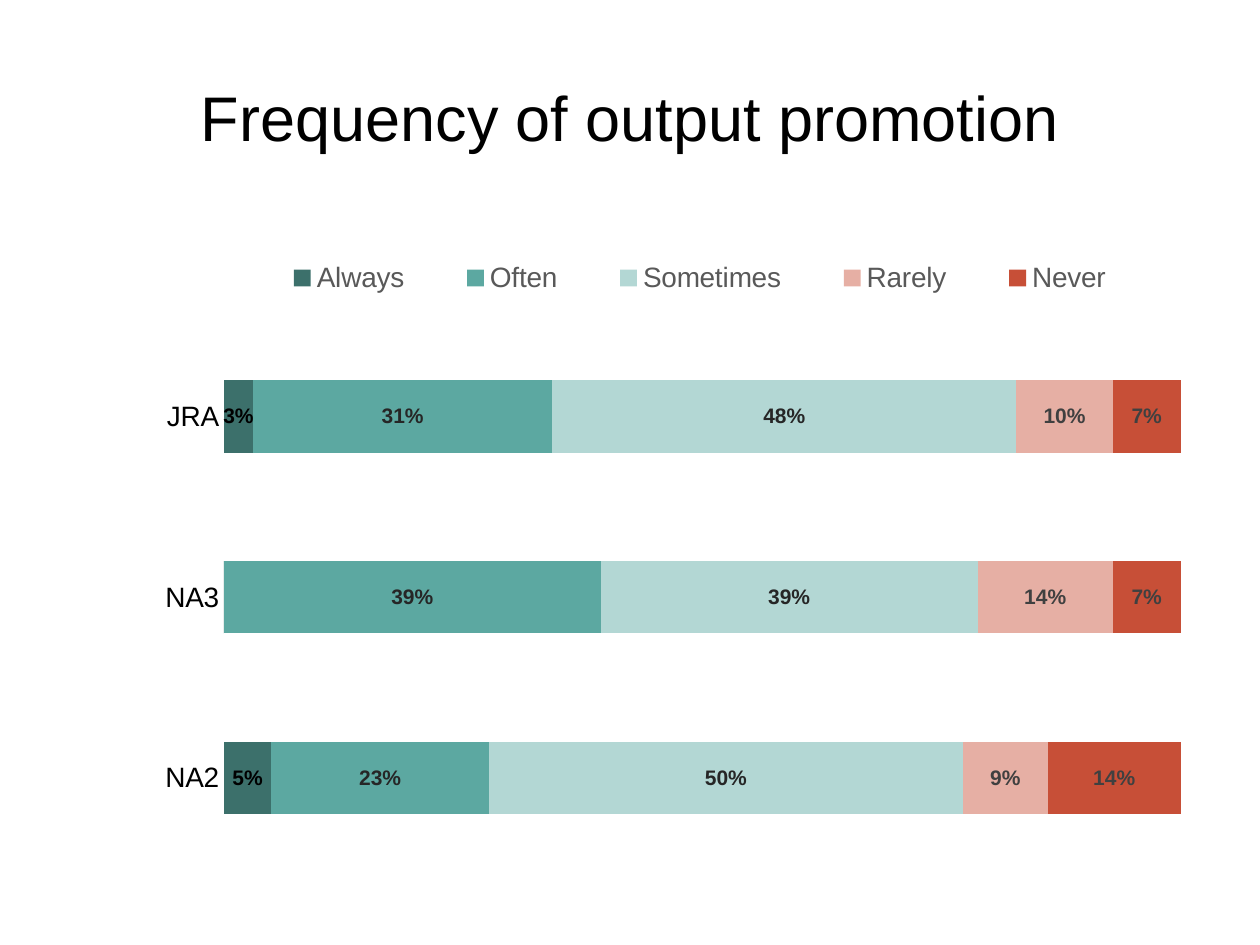
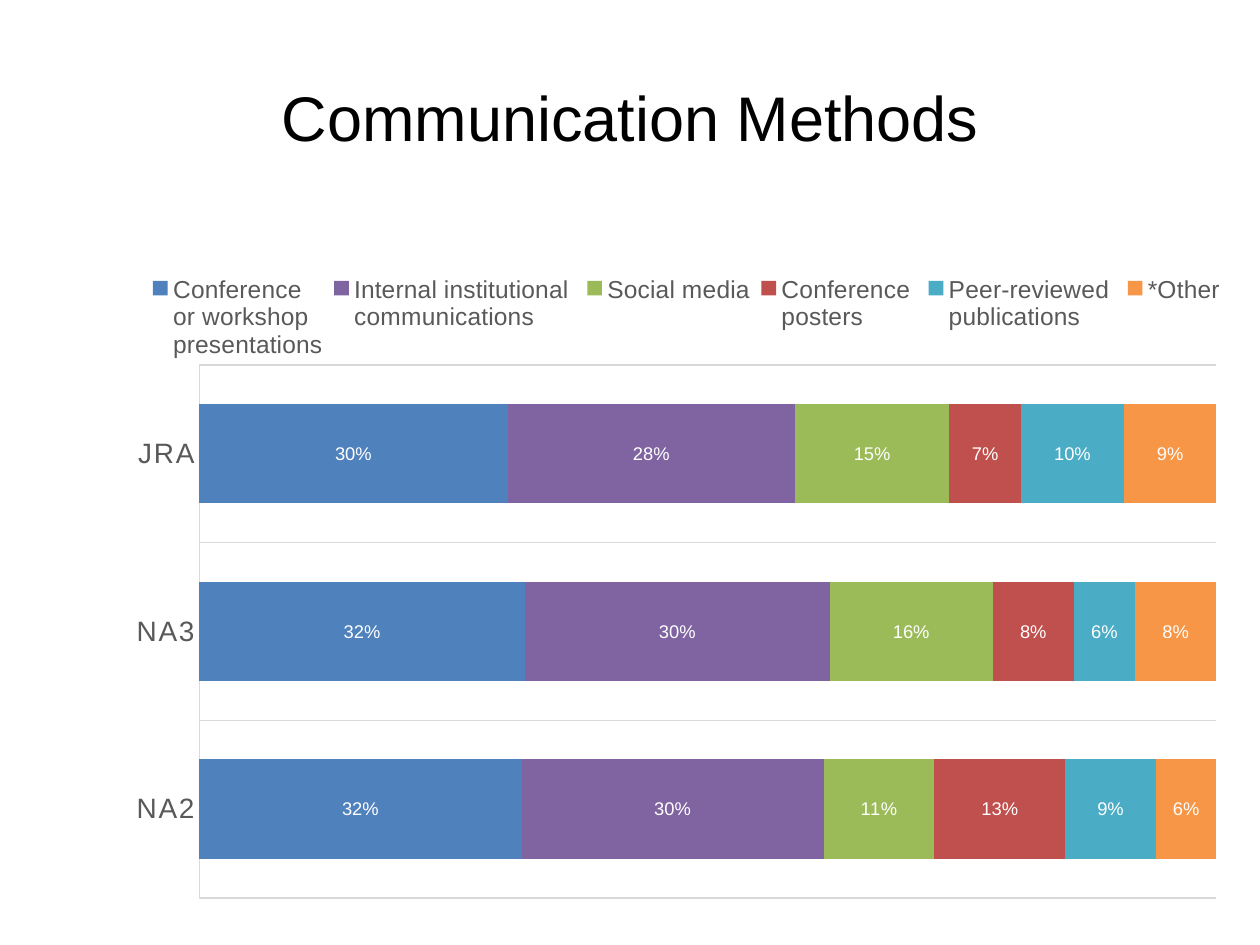
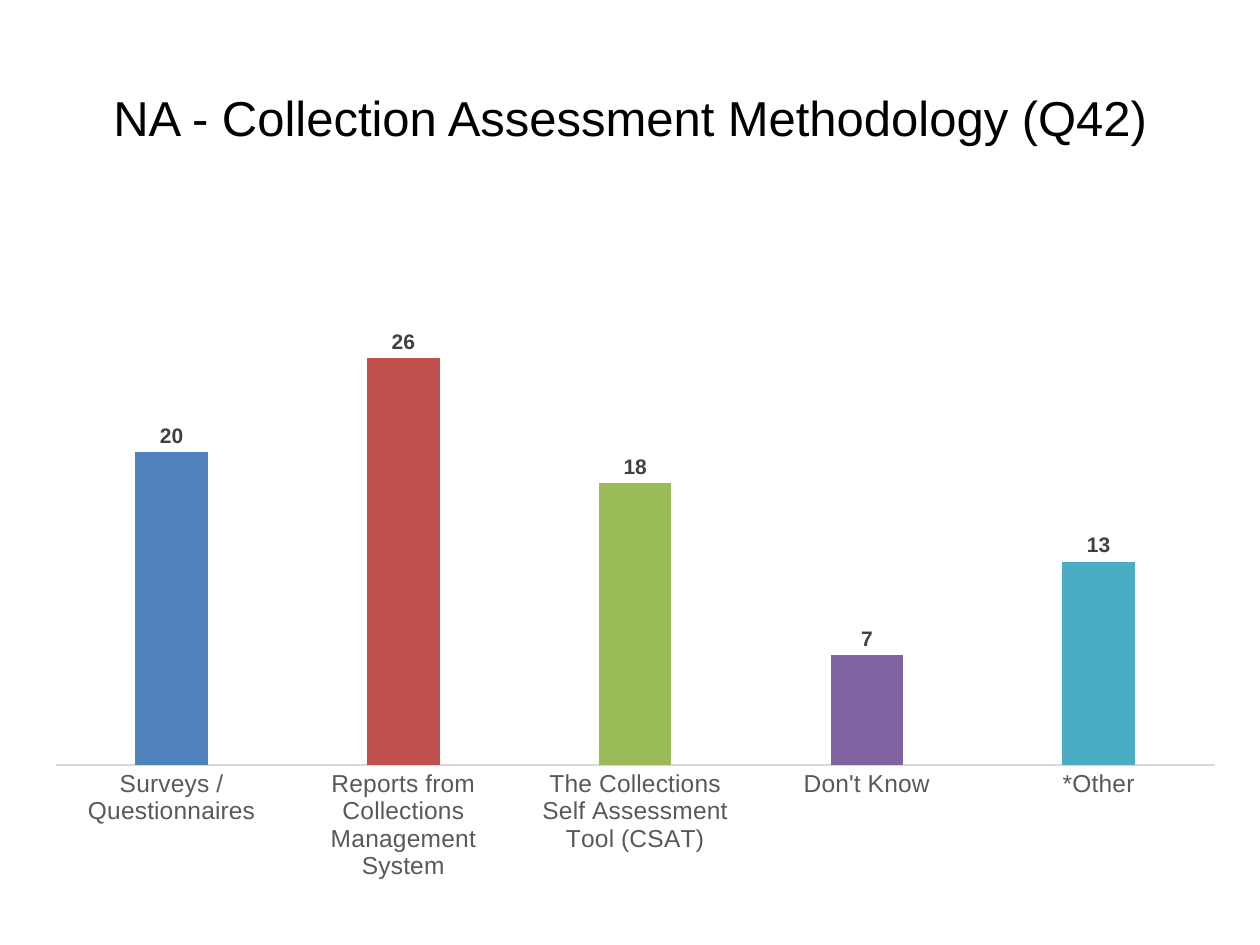
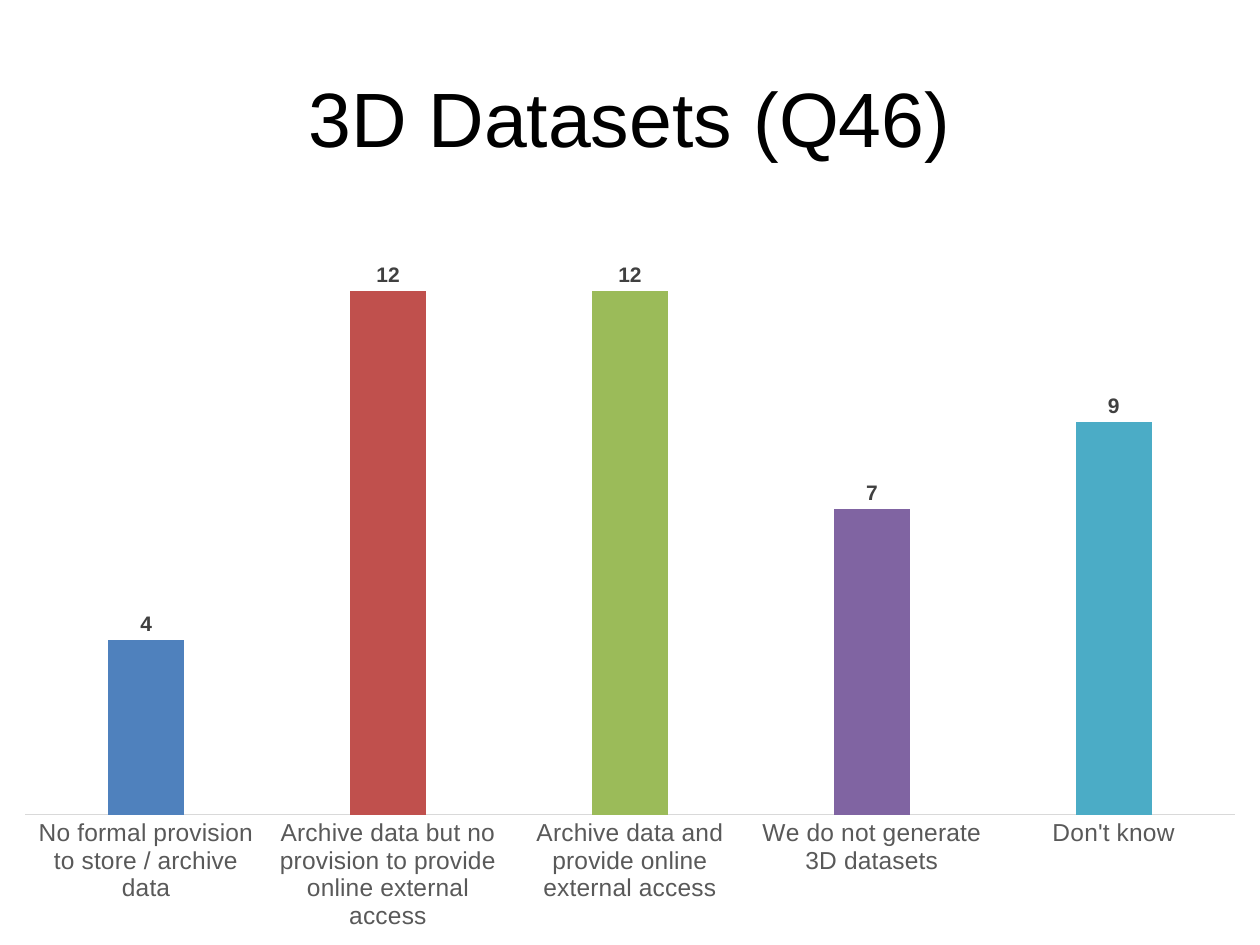
from pptx import Presentation
from pptx.chart.data import CategoryChartData
from pptx.dml.color import RGBColor
from pptx.enum.chart import XL_CHART_TYPE, XL_LABEL_POSITION, XL_LEGEND_POSITION, XL_TICK_MARK
from pptx.enum.text import MSO_ANCHOR, PP_ALIGN
from pptx.oxml import parse_xml
from pptx.oxml.ns import nsdecls
from pptx.util import Cm, Pt

STACKED = XL_CHART_TYPE.BAR_STACKED_100
COLUMNS = XL_CHART_TYPE.COLUMN_CLUSTERED
CENTER_LABEL = XL_LABEL_POSITION.CENTER
OUTSIDE_LABEL = XL_LABEL_POSITION.OUTSIDE_END
BOTTOM = XL_LEGEND_POSITION.BOTTOM
TOP = XL_LEGEND_POSITION.TOP
NO_TICK = XL_TICK_MARK.NONE
MIDDLE = MSO_ANCHOR.MIDDLE
CENTER = PP_ALIGN.CENTER

FONT = "Arial"
COLORS = {
    "black": "000000", "white": "FFFFFF", "ink": "262626", "dark": "404040",
    "gray": "595959", "rule": "D9D9D9",
    "pine": "3C706B", "teal": "5CA8A1", "mist": "B3D7D4", "blush": "E6AFA4", "brick": "C74F37",
    "blue": "4F81BD", "red": "C0504D", "green": "9BBB59", "purple": "8064A2",
    "aqua": "4BACC6", "orange": "F79646",
}
COLUMN_COLORS = ["blue", "red", "green", "purple", "aqua"]
GROUPS = ["NA2", "NA3", "JRA"]
TITLE_AREA = (1.27, 0.76, 22.86, 3.18)

SLIDES = [
    {
        "title": "Frequency of output promotion", "title_size": 36,
        "area": (0.81, 4.88, 23.75, 13.13), "kind": STACKED, "categories": GROUPS,
        "series": [
            ("Always", [0.05, 0, 0.03], "pine", "black"),
            ("Often", [0.23, 0.39, 0.31], "teal", "ink"),
            ("Sometimes", [0.5, 0.39, 0.48], "mist", "ink"),
            ("Rarely", [0.09, 0.14, 0.1], "blush", "dark"),
            ("Never", [0.14, 0.07, 0.07], "brick", "dark"),
        ],
        "label_size": 12, "label_bold": True, "gap": 150, "maximum": 1,
        "axis_size": 16, "axis_color": "black", "axis_line": False,
        "legend": (BOTTOM, 16, (0.17, 0.02, 0.78, 0.07)),
        "plot": (0.156, 0.129, 0.812, 0.833),
    },
    {
        "title": "Communication Methods", "title_size": 36,
        "area": (0.08, 4.65, 25.25, 13.97), "kind": STACKED, "categories": GROUPS,
        "series": [
            ("Conference \nor workshop \npresentations", [0.32, 0.32, 0.3], "blue", "white"),
            ("Internal institutional \ncommunications", [0.3, 0.3, 0.28], "purple", "white"),
            ("Social media", [0.11, 0.16, 0.15], "green", "white"),
            ("Conference \nposters", [0.13, 0.08, 0.07], "red", "white"),
            ("Peer-reviewed \npublications", [0.09, 0.06, 0.1], "aqua", "white"),
            ("*Other", [0.06, 0.08, 0.09], "orange", "white"),
        ],
        "label_size": 10.5, "label_bold": False, "gap": 79, "maximum": 1,
        "axis_size": 16, "axis_color": "gray", "axis_line": True,
        "axis_spacing": 120, "grid": True,
        "legend": (TOP, 14, (0.11, 0.06, 0.87, 0.13)),
        "plot": (0.156, 0.194, 0.812, 0.769),
    },
    {
        "title": "NA - Collection Assessment Methodology (Q42)", "title_size": 28,
        "area": (0.64, 5.72, 24.33, 12.27), "kind": COLUMNS,
        "categories": [
            "Surveys / Questionnaires", "Reports from Collections Management System",
            "The Collections Self Assessment Tool (CSAT)", "Don't Know", "*Other",
        ],
        "series": [("Series 1", [20, 26, 18, 7, 13], "blue", "dark")],
        "label_size": 12, "label_bold": True, "gap": 219, "maximum": 30,
        "axis_size": 14, "axis_color": "gray", "axis_line": True,
    },
    {
        "title": "3D Datasets (Q46)", "title_size": 44,
        "area": (0, 3.81, 25.4, 15.24), "kind": COLUMNS,
        "categories": [
            "No formal provision to store / archive data",
            "Archive data but no provision to provide online external access",
            "Archive data and provide online external access",
            "We do not generate 3D datasets", "Don't know",
        ],
        "series": [("Series 1", [4, 12, 12, 7, 9], "blue", "dark")],
        "label_size": 12, "label_bold": True, "gap": 219, "maximum": 14,
        "axis_size": 14, "axis_color": "gray", "axis_line": True,
    },
]


def color(name):
    return RGBColor.from_string(COLORS[name])


def set_font(font, size, ink, bold=False):
    font.name = FONT
    font.size = Pt(size)
    font.bold = bold
    font.color.rgb = color(ink)


def set_fill(target, name):
    target.format.fill.solid()
    target.format.fill.fore_color.rgb = color(name)


def set_line(line):
    line.color.rgb = color("rule")
    line.width = Pt(0.75)


def add_text(page, text, area, size, ink="black", align=CENTER, anchor=MIDDLE):
    box = page.shapes.add_textbox(*map(Cm, area))
    frame = box.text_frame
    frame.word_wrap = True
    frame.vertical_anchor = anchor
    para = frame.paragraphs[0]
    para.alignment = align
    span = para.add_run()
    span.text = text
    set_font(span.font, size, ink)


def make_layout(parent, bounds, target=""):
    for old in parent.xpath("c:layout"):
        parent.remove(old)
    modes = '<c:xMode val="edge"/><c:yMode val="edge"/>'
    sizes = "".join(f'<c:{key} val="{value}"/>' for key, value in zip("xywh", bounds))
    return parse_xml(
        f'<c:layout {nsdecls("c")}><c:manualLayout>{target}{modes}{sizes}</c:manualLayout></c:layout>'
    )


def place_plot(chart, bounds):
    area = chart._chartSpace.xpath("c:chart/c:plotArea")[0]
    area.insert(0, make_layout(area, bounds, '<c:layoutTarget val="inner"/>'))


def add_legend(chart, position, size, bounds):
    chart.has_legend = True
    chart.legend.position = position
    chart.legend.include_in_layout = False
    set_font(chart.legend.font, size, "gray")
    legend = chart._chartSpace.xpath("c:chart/c:legend")[0]
    legend.xpath("c:legendPos")[0].addnext(make_layout(legend, bounds))


def style_axes(chart, info):
    values = chart.value_axis
    values.visible = False
    values.has_major_gridlines = False
    values.minimum_scale = 0
    values.maximum_scale = info["maximum"]
    axis = chart.category_axis
    axis.major_tick_mark = axis.minor_tick_mark = NO_TICK
    set_font(axis.tick_labels.font, info["axis_size"], info["axis_color"])
    if info["axis_line"]:
        set_line(axis.format.line)
    else:
        axis.format.line.fill.background()
    if info.get("grid"):
        axis.has_major_gridlines = True
        set_line(axis.major_gridlines.format.line)
    if "axis_spacing" in info:
        text = chart._chartSpace.xpath(".//c:catAx/c:txPr//a:defRPr")[0]
        text.set("spc", str(info["axis_spacing"]))


def style_series(chart, info):
    stacked = info["kind"] == STACKED
    for series, (name, values, fill, ink) in zip(chart.plots[0].series, info["series"]):
        set_fill(series, fill)
        series.invert_if_negative = False
        labels = series.data_labels
        labels.show_value = True
        labels.position = CENTER_LABEL if stacked else OUTSIDE_LABEL
        set_font(labels.font, info["label_size"], ink, info["label_bold"])
        if stacked:
            labels.number_format = "0%" if all(values) else "0%;;"
            labels.number_format_is_linked = False
        else:
            for index, shade in enumerate(COLUMN_COLORS):
                set_fill(series.points[index], shade)


def add_chart(page, info):
    stacked = info["kind"] == STACKED
    data = CategoryChartData(number_format="0%" if stacked else "General")
    data.categories = info["categories"]
    for name, values, fill, ink in info["series"]:
        data.add_series(name, values)
    chart = page.shapes.add_chart(info["kind"], *map(Cm, info["area"]), data).chart
    chart.has_title = False
    chart.has_legend = False
    set_font(chart.font, 10, "black")
    plot = chart.plots[0]
    plot.vary_by_categories = False
    plot.gap_width = info["gap"]
    plot.overlap = 100 if stacked else -27
    style_axes(chart, info)
    style_series(chart, info)
    if "legend" in info:
        add_legend(chart, *info["legend"])
    if "plot" in info:
        place_plot(chart, info["plot"])


def main():
    deck = Presentation()
    deck.slide_width, deck.slide_height = Cm(25.4), Cm(19.05)
    for info in SLIDES:
        page = deck.slides.add_slide(deck.slide_layouts[6])
        add_text(page, info["title"], TITLE_AREA, info["title_size"])
        add_chart(page, info)
    deck.save("out.pptx")


if __name__ == "__main__":
    main()
